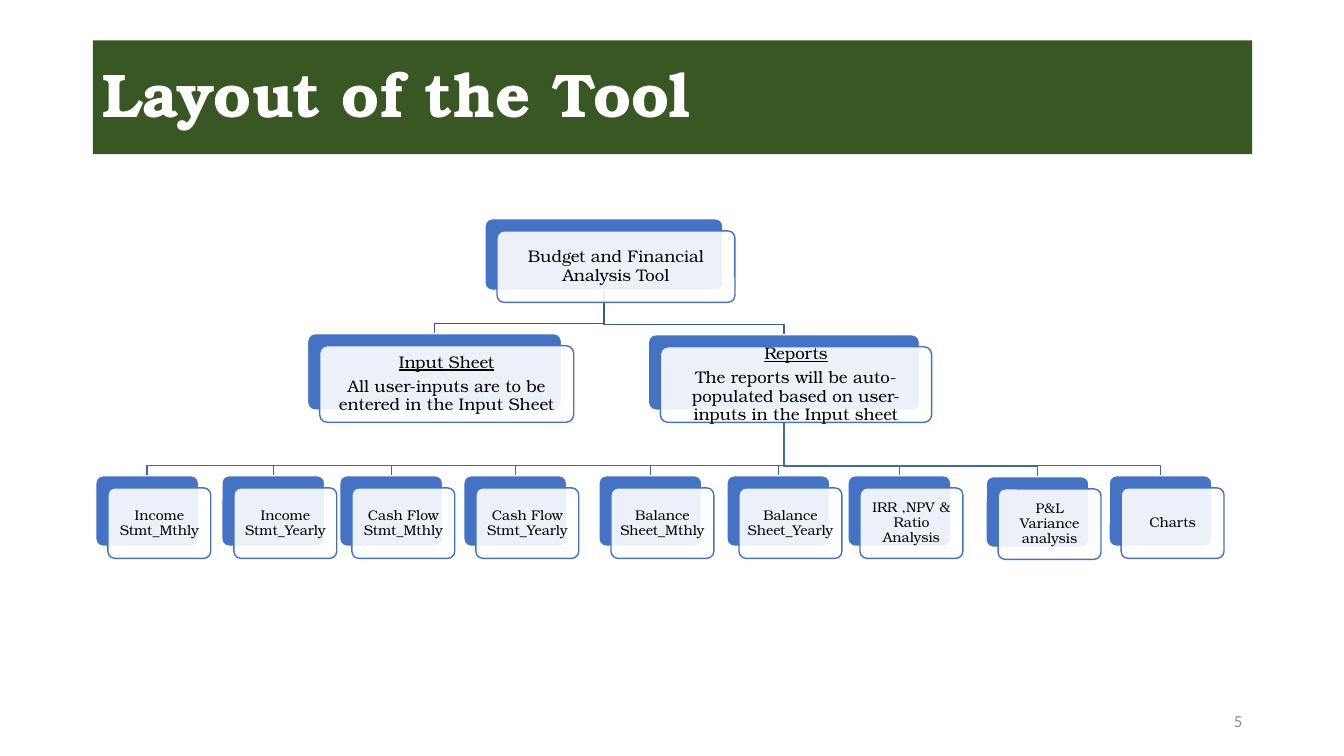
from dataclasses import dataclass

from lxml import etree
from pptx import Presentation
from pptx.dml.color import RGBColor
from pptx.enum.shapes import MSO_SHAPE
from pptx.enum.text import MSO_ANCHOR, MSO_AUTO_SIZE, PP_ALIGN
from pptx.oxml.ns import qn
from pptx.util import Inches, Pt

ROUNDED = MSO_SHAPE.ROUNDED_RECTANGLE
MIDDLE = MSO_ANCHOR.MIDDLE
NO_AUTOFIT = MSO_AUTO_SIZE.NONE
LEFT, CENTER, RIGHT = PP_ALIGN.LEFT, PP_ALIGN.CENTER, PP_ALIGN.RIGHT

SERIF = "TeX Gyre Bonum"
BLUE = "4472C4"
WHITE = "FFFFFF"
CARD_OFFSET = 0.12
BEND_GAP = 0.1


@dataclass
class Card:
    left: float
    top: float
    width: float
    height: float
    body: str
    heading: str = ""
    size: int = 12
    inset: float = 0.05

    @property
    def center(self) -> float:
        return self.left + self.width / 2

    @property
    def bottom(self) -> float:
        return self.top + self.height


def color(value: str) -> RGBColor:
    return RGBColor.from_string(value)


def format_paragraph(paragraph, size: int, font: str, text_color: str, alignment) -> None:
    paragraph.alignment = alignment
    for run in paragraph.runs:
        run.font.size = Pt(size)
        run.font.name = font
        run.font.color.rgb = color(text_color)


def add_title(slide, text: str) -> None:
    title = slide.shapes.title
    title.left, title.top = Inches(0.92), Inches(0.4)
    title.width, title.height = Inches(11.5), Inches(1.13)
    title.fill.solid()
    title.fill.fore_color.rgb = color("385723")
    frame = title.text_frame
    frame.text = text
    frame.auto_size = NO_AUTOFIT
    frame.vertical_anchor = MIDDLE
    paragraph = frame.paragraphs[0]
    paragraph.line_spacing = 0.9
    format_paragraph(paragraph, 44, SERIF, WHITE, LEFT)
    paragraph.runs[0].font.bold = True


def add_page_number(slide, number: str) -> None:
    box = slide.shapes.add_textbox(Inches(9.42), Inches(6.95), Inches(3), Inches(0.4))
    frame = box.text_frame
    frame.text = number
    frame.word_wrap = True
    frame.vertical_anchor = MIDDLE
    format_paragraph(frame.paragraphs[0], 12, "Calibri", "8C8C8C", RIGHT)


def add_branch(slide, parent: Card, child: Card, line_color: str) -> None:
    bend = child.top - BEND_GAP
    points = [(parent.center, bend), (child.center, bend), (child.center, child.top)]
    builder = slide.shapes.build_freeform(Inches(parent.center), Inches(parent.bottom))
    builder.add_line_segments([(Inches(x), Inches(y)) for x, y in points], close=False)
    branch = builder.convert_to_shape()
    branch.fill.background()
    branch.line.color.rgb = color(line_color)
    branch.line.width = Pt(1)
    branch.shadow.inherit = False


def add_panel(slide, card: Card, offset: float, fill: str, line: str):
    panel = slide.shapes.add_shape(
        ROUNDED, Inches(card.left + offset), Inches(card.top + offset),
        Inches(card.width), Inches(card.height))
    panel.adjustments[0] = 0.1
    panel.fill.solid()
    panel.fill.fore_color.rgb = color(fill)
    panel.line.color.rgb = color(line)
    panel.line.width = Pt(1)
    panel.shadow.inherit = False
    return panel


def add_card(slide, card: Card) -> None:
    add_panel(slide, card, 0, BLUE, WHITE)
    front = add_panel(slide, card, CARD_OFFSET, WHITE, BLUE)
    fill_color = front.fill._xPr.find(qn("a:solidFill"))[0]
    etree.SubElement(fill_color, qn("a:alpha")).set("val", "90000")

    frame = front.text_frame
    frame.text = f"{card.heading}\n{card.body}" if card.heading else card.body
    frame.word_wrap = True
    frame.vertical_anchor = MIDDLE
    frame.margin_left = frame.margin_right = Inches(card.inset)
    frame.margin_top = frame.margin_bottom = Inches(card.inset)
    for paragraph in frame.paragraphs:
        paragraph.line_spacing = 0.9
        paragraph.space_after = Pt(card.size * 0.35)
        format_paragraph(paragraph, card.size, SERIF, "000000", CENTER)
    if card.heading:
        frame.paragraphs[0].runs[0].font.underline = True


def report_card(left: float, body: str, top: float = 4.72) -> Card:
    return Card(left, top, 1.02, 0.7, body, size=10, inset=0.04)


TOOL = Card(4.81, 2.17, 2.36, 0.71, "Budget and Financial Analysis Tool")
INPUT_SHEET = Card(3.05, 3.31, 2.52, 0.76,
                   "All user-inputs are to be entered in the Input Sheet", "Input Sheet")
REPORTS = Card(6.43, 3.32, 2.69, 0.75,
               "The reports will be auto-populated based on user-inputs in the Input sheet",
               "Reports")
REPORT_CARDS = [
    report_card(0.95, "Income Stmt_Mthly"),
    report_card(2.2, "Income Stmt_Yearly"),
    report_card(3.37, "Cash Flow Stmt_Mthly"),
    report_card(4.6, "Cash Flow Stmt_Yearly"),
    report_card(5.94, "Balance Sheet_Mthly"),
    report_card(7.21, "Balance Sheet_Yearly"),
    report_card(8.41, "IRR ,NPV & Ratio Analysis"),
    report_card(9.78, "P&L Variance analysis", top=4.73),
    report_card(11, "Charts"),
]


def main() -> None:
    presentation = Presentation()
    presentation.slide_width = Inches(13.33)
    presentation.slide_height = Inches(7.5)
    slide = presentation.slides.add_slide(presentation.slide_layouts[5])
    add_title(slide, "Layout of the Tool")
    add_page_number(slide, "5")
    for card in REPORT_CARDS:
        add_branch(slide, REPORTS, card, "3E67B2")
    for card in (REPORTS, INPUT_SHEET):
        add_branch(slide, TOOL, card, "365B9D")
    for card in (TOOL, INPUT_SHEET, REPORTS, *REPORT_CARDS):
        add_card(slide, card)
    presentation.save("out.pptx")


if __name__ == "__main__":
    main()
